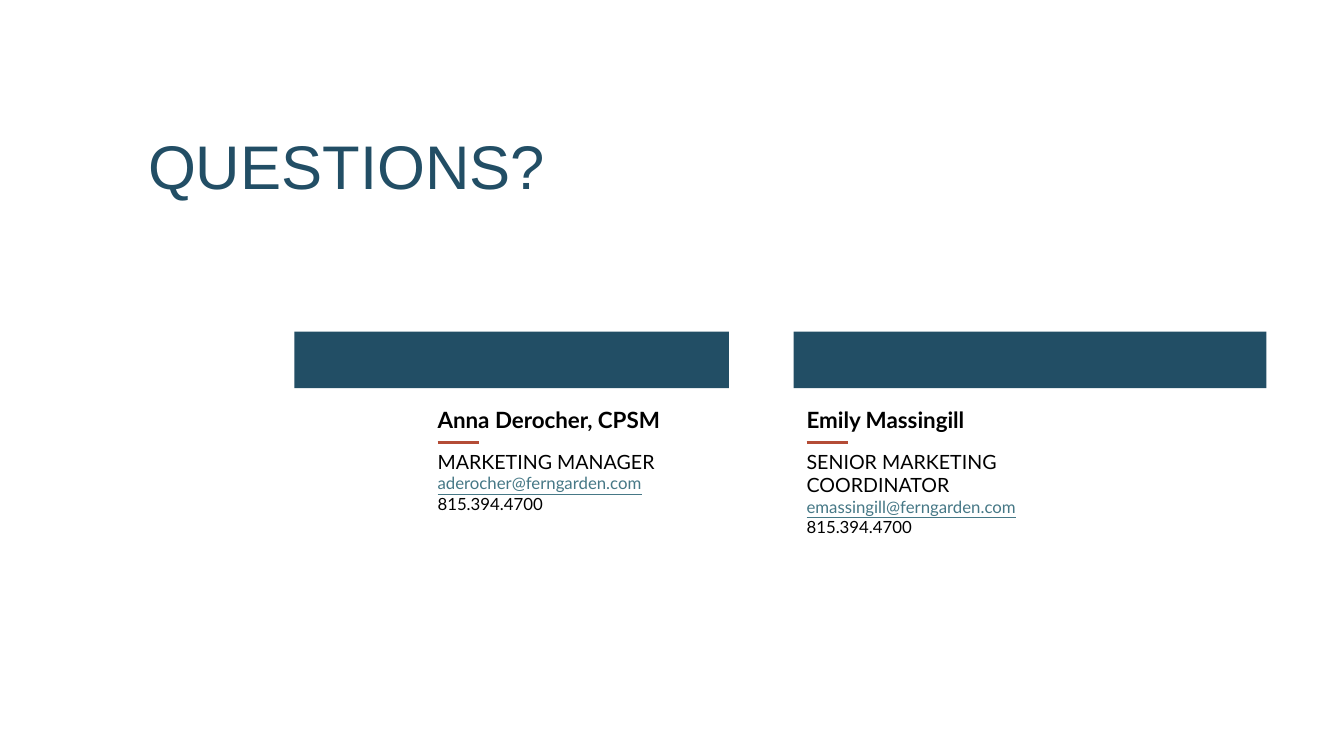
"""Build the closing questions slide with two contact cards."""
from lxml.etree import SubElement
from pptx import Presentation
from pptx.dml.color import RGBColor
from pptx.enum.shapes import MSO_CONNECTOR, MSO_SHAPE
from pptx.enum.text import MSO_ANCHOR, PP_ALIGN
from pptx.oxml.ns import qn
from pptx.util import Inches, Pt

COLORS = {"navy": "224E65", "white": "FFFFFF", "black": "000000",
          "rust": "B44C36", "mail": "467886"}


def add_bar(shapes, left, top, width, height, color):
    bar = shapes.add_shape(MSO_SHAPE.RECTANGLE, Inches(left), Inches(top),
                           Inches(width), Inches(height))
    bar.shadow.inherit = False
    bar.fill.solid()
    bar.fill.fore_color.rgb = RGBColor.from_string(COLORS[color])
    bar.line.fill.background()
    return bar


def add_text(shapes, left, top, width, height, lines):
    box = shapes.add_textbox(Inches(left), Inches(top), Inches(width), Inches(height))
    frame = box.text_frame
    frame.word_wrap = True
    frame.margin_left = frame.margin_top = frame.margin_right = frame.margin_bottom = 0
    frame.text = "\n".join(line[0] for line in lines)
    for para, (_, size, color, bold) in zip(frame.paragraphs, lines):
        font = para.runs[0].font
        font.name = "Lato"
        font.size = Pt(size)
        font.bold = bold
        font.underline = color == "mail"
        font.color.rgb = RGBColor.from_string(COLORS[color])


deck = Presentation()
deck.slide_width = Inches(13.33)
deck.slide_height = Inches(7.5)
slide = deck.slides.add_slide(deck.slide_layouts[5])

title = slide.shapes.title
title.left, title.top = Inches(1.01), Inches(0.96)
title.width, title.height = Inches(4.86), Inches(1.45)
title.text_frame.text = "QUESTIONS?"
title.text_frame.vertical_anchor = MSO_ANCHOR.MIDDLE
para = title.text_frame.paragraphs[0]
para.alignment = PP_ALIGN.CENTER
para.line_spacing = 0.9
font = para.runs[0].font
font.name = "Arial"
font.size = Pt(44)
font.color.rgb = RGBColor.from_string(COLORS["navy"])

cards = [
    ("Anna Derocher, CPSM", "MARKETING MANAGER", "aderocher@ferngarden.com",
     2.83, 2.92, 7.23, 4.34, 2.66),
    ("Emily Massingill", "SENIOR MARKETING COORDINATOR", "emassingill@ferngarden.com",
     7.87, 7.87, 12.56, 8, 3.23),
]
for name, role, mail, panel_left, bar_left, right, left, width in cards:
    shapes = slide.shapes.add_group_shape().shapes
    panel = add_bar(shapes, panel_left, 3.77, right - panel_left, 1.72, "white")
    tint = panel.fill.fore_color
    alpha = SubElement(panel.element.spPr.find(qn("a:solidFill"))[0], qn("a:alpha"))
    alpha.set("val", "35000")
    add_bar(shapes, bar_left, 3.29, right - bar_left, 0.56, "navy")
    add_text(shapes, left, 4.03, 2.9, 0.29, [(name, 16, "black", True)])
    rule = shapes.add_connector(MSO_CONNECTOR.STRAIGHT, Inches(left), Inches(4.39),
                                Inches(left + 0.41), Inches(4.39))
    rule.line.color.rgb = RGBColor.from_string(COLORS["rust"])
    rule.line.width = Pt(1.5)
    SubElement(rule.element.spPr, qn("a:effectLst"))
    add_text(shapes, left, 4.46, width, 0.91,
             [(role, 14, "black", False), (mail, 12, "mail", False),
              ("815.394.4700", 12, "black", False)])

deck.save("out.pptx")
